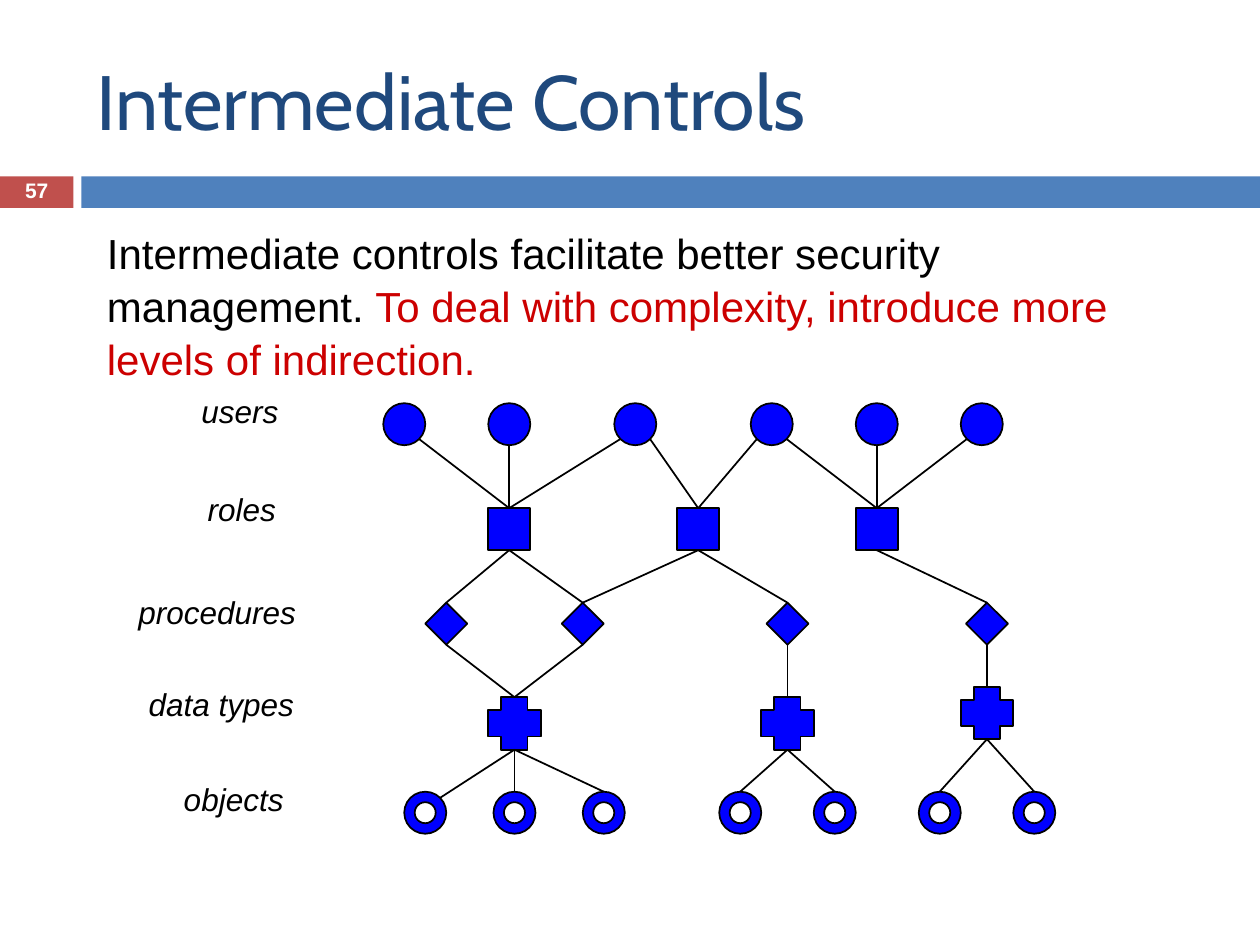
from lxml import etree
from pptx import Presentation
from pptx.dml.color import RGBColor
from pptx.enum.shapes import MSO_CONNECTOR, MSO_SHAPE
from pptx.enum.text import MSO_ANCHOR, PP_ALIGN
from pptx.oxml.ns import qn
from pptx.util import Pt

RECTANGLE, OVAL, DIAMOND = MSO_SHAPE.RECTANGLE, MSO_SHAPE.OVAL, MSO_SHAPE.DIAMOND
CROSS, DONUT = MSO_SHAPE.CROSS, MSO_SHAPE.DONUT
STRAIGHT = MSO_CONNECTOR.STRAIGHT
TOP, MIDDLE = MSO_ANCHOR.TOP, MSO_ANCHOR.MIDDLE
LEFT, CENTER = PP_ALIGN.LEFT, PP_ALIGN.CENTER
TOP_SIDE, BOTTOM_SIDE = 0, 2
BLACK, BLUE, WHITE = "000000", "0000FF", "FFFFFF"

presentation = Presentation()
presentation.slide_width, presentation.slide_height = Pt(720), Pt(540)
slide = presentation.slides.add_slide(presentation.slide_layouts[6])
color = RGBColor.from_string


def add_text(box, runs, font_format, anchor=TOP, alignment=LEFT, line_spacing=1.0):
    """Add a text box; runs is a list of (text, hex colour) pairs."""
    frame = slide.shapes.add_textbox(*map(Pt, box)).text_frame
    frame.word_wrap = True
    frame.vertical_anchor = anchor
    paragraph = frame.paragraphs[0]
    paragraph.alignment = alignment
    paragraph.line_spacing = line_spacing
    for text, hex_color in runs:
        run = paragraph.add_run()
        run.text = text
        run.font.color.rgb = color(hex_color)
        for name, value in font_format.items():
            setattr(run.font, name, value)


def add_filled_shape(kind, box, fill, line=None):
    shape = slide.shapes.add_shape(kind, *map(Pt, box))
    shape.shadow.inherit = False
    shape.fill.solid()
    shape.fill.fore_color.rgb = color(fill)
    if line:
        shape.line.color.rgb = color(line)
        shape.line.width = Pt(1)
    else:
        shape.line.fill.background()
    return shape


# Title, number and band
add_filled_shape(RECTANGLE, (0, 100.8, 42, 18), "C0504D")
add_filled_shape(RECTANGLE, (46.5, 100.8, 673.5, 18), "4F81BD")
add_text((48, 18, 642, 78), [("Intermediate Controls", "1F497D")],
         {"name": "Cabin", "size": Pt(44)}, anchor=MIDDLE)
add_text((0, 100, 42, 19.5), [("57", WHITE)],
         {"name": "Arial", "size": Pt(12), "bold": True},
         anchor=MIDDLE, alignment=CENTER, line_spacing=0.8)

# Levels: shape, size, then (centre x, top) of each node from left to right
levels = {
    "users": (OVAL, 24, [(x, 230.4) for x in (231, 291, 363, 441, 501, 561)]),
    "roles": (RECTANGLE, 24, [(x, 290.4) for x in (291, 399, 501)]),
    "procedures": (DIAMOND, 24, [(x, 344.4) for x in (255, 333, 450, 564)]),
    "data types": (CROSS, 30, [(294, 398.4), (450, 398.4), (564, 392.4)]),
    "objects": (DONUT, 24, [(x, 452.4) for x in (243, 294, 345, 423, 477, 537, 591)]),
}
nodes = {}
for level, (kind, size, places) in levels.items():
    nodes[level] = [add_filled_shape(kind, (x - size / 2, top, size, size), BLUE, BLACK)
                    for x, top in places]
    if kind in (CROSS, DONUT):
        for shape in nodes[level]:
            shape.adjustments[0] = 0.25

# Links between neighbouring levels: (upper node, lower node)
links = {
    ("users", "roles"): [(0, 0), (1, 0), (2, 0), (2, 1), (3, 1), (3, 2), (4, 2), (5, 2)],
    ("roles", "procedures"): [(0, 0), (0, 1), (1, 1), (1, 2), (2, 3)],
    ("procedures", "data types"): [(0, 0), (1, 0), (2, 1), (3, 2)],
    ("data types", "objects"): [(0, 0), (0, 1), (0, 2), (1, 3), (1, 4), (2, 5), (2, 6)],
}
diagonal = 8.5  # offset from a circle's centre to its rim at 45 degrees
for (upper, lower), pairs in links.items():
    upper_size = levels[upper][1]
    for start, end in pairs:
        start_x, start_top = levels[upper][2][start]
        end_x, end_y = levels[lower][2][end]
        start_y = start_top + upper_size
        on_start_rim = upper == "users"
        on_end_rim = lower == "objects" and end == 0
        if on_start_rim and start_x != end_x:
            start_x += diagonal if end_x > start_x else -diagonal
            start_y = start_top + 12 + diagonal
        if on_end_rim:
            end_x, end_y = end_x + diagonal, end_y + 12 - diagonal
        connector = slide.shapes.add_connector(
            STRAIGHT, Pt(start_x), Pt(start_y), Pt(end_x), Pt(end_y))
        if not on_start_rim:
            connector.begin_connect(nodes[upper][start], BOTTOM_SIDE)
        if not on_end_rim:
            connector.end_connect(nodes[lower][end], TOP_SIDE)
        connector.line.color.rgb = color(BLACK)
        connector.line.width = Pt(1)
        etree.SubElement(connector._element.spPr, qn("a:effectLst"))

# Level names
label_boxes = [(108, 220.3, 83), (111.6, 276.5, 76), (72, 335.5, 155),
               (77.8, 388.1, 144), (97.9, 442.1, 104)]
for level, (left, top, width) in zip(levels, label_boxes):
    add_text((left, top, width, 41), [(level, BLACK)],
             {"name": "Arial", "size": Pt(18), "italic": True})

add_text((54, 125.3, 624, 94.3),
         [("Intermediate controls facilitate better security management. ", BLACK),
          ("To deal with complexity, introduce more levels of indirection.", "CC0000")],
         {"name": "Arial", "size": Pt(24)}, line_spacing=1.05)

presentation.save("out.pptx")
